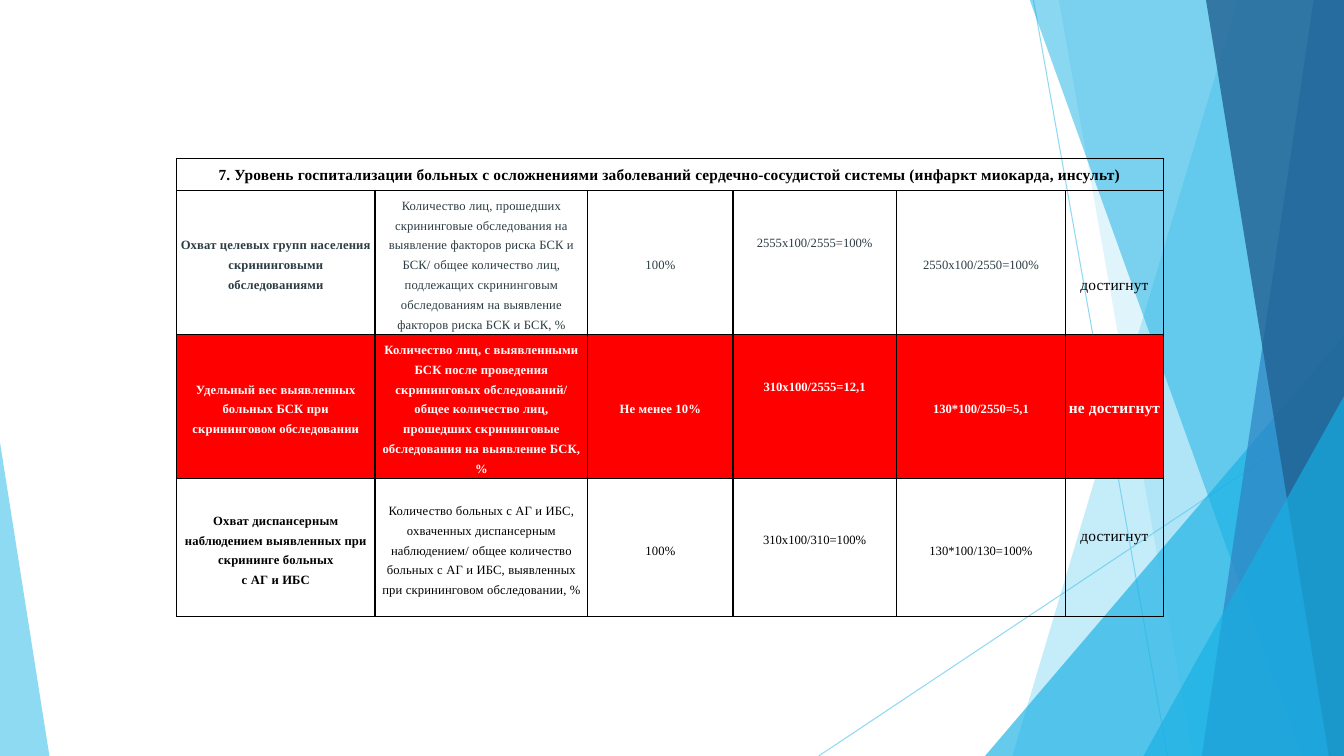
from lxml import etree
from pptx import Presentation
from pptx.dml.color import RGBColor
from pptx.enum.shapes import MSO_CONNECTOR, MSO_SHAPE
from pptx.enum.text import MSO_ANCHOR, PP_ALIGN
from pptx.oxml.ns import qn
from pptx.util import Inches, Pt

LINE = MSO_CONNECTOR.STRAIGHT
TRIANGLE = MSO_SHAPE.ISOSCELES_TRIANGLE
MIDDLE = MSO_ANCHOR.MIDDLE
CENTER = PP_ALIGN.CENTER

SKY = RGBColor(0x5F, 0xCB, 0xEF)
CYAN = RGBColor(0x17, 0xB0, 0xE4)
BLUE = RGBColor(0x2E, 0x83, 0xC3)
NAVY = RGBColor(0x22, 0x62, 0x92)
SLATE = RGBColor(0x2C, 0x3C, 0x43)
BLACK = RGBColor(0, 0, 0)
WHITE = RGBColor(255, 255, 255)
RED = RGBColor(255, 0, 0)
FONT = "Times New Roman"
WIDE, HIGH = 13.33, 7.5

# Table content
HEAD = ("7. Уровень госпитализации больных с осложнениями заболеваний "
        "сердечно-сосудистой системы (инфаркт миокарда, инсульт)")
ROWS = [
    ["Охват целевых групп населения скрининговыми обследованиями",
     "Количество лиц, прошедших скрининговые обследования на выявление "
     "факторов риска БСК и БСК/ общее количество лиц, подлежащих скрининговым "
     "обследованиям на выявление факторов риска БСК и БСК, %",
     "100%", "2555х100/2555=100%", "2550х100/2550=100%", "достигнут"],
    ["Удельный вес выявленных больных БСК при скрининговом обследовании",
     "Количество лиц, с выявленными БСК после проведения скрининговых "
     "обследований/ общее количество лиц, прошедших скрининговые "
     "обследования на выявление БСК, %",
     "Не менее 10%", "310х100/2555=12,1", "130*100/2550=5,1", "не достигнут"],
    ["Охват диспансерным наблюдением выявленных при скрининге больных\nс АГ и ИБС",
     "Количество больных с АГ и ИБС, охваченных диспансерным наблюдением/ "
     "общее количество больных с АГ и ИБС, выявленных при скрининговом "
     "обследовании, %",
     "100%", "310х100/310=100%", "130*100/130=100%", "достигнут"],
]
COLS = [1.97, 2.11, 1.44, 1.62, 1.68, 0.97]
TALL = [0.32, 1.43, 1.43, 1.37]
INKS = [SLATE, WHITE, BLACK]
# Top and bottom insets of cells whose text sits off the middle
SHIFT = {(1, 3): (0, 0.44), (1, 5): (0.42, 0), (2, 3): (0, 0.44),
         (3, 3): (0, 0.2), (3, 5): (0, 0.25)}

# Background facets: top left x, bottom left x, colour, opacity
BANDS_LOW = [(12.28, 10.04, SKY, 36), (10.5, 11.83, SKY, 20)]
BANDS_TOP = [(10.21, 12.91, CYAN, 50), (13.03, 11.92, BLUE, 70),
             (11.96, 13.18, NAVY, 80)]
# Left, top, width, apex, colour, opacity
PEAK_LOW = (9.77, 3.33, 3.56, 1, CYAN, 66)
PEAKS_TOP = [(11.34, 3.93, 1.99, 1, CYAN, 66), (0, 4.39, 0.49, 0, SKY, 70)]
RAYS = [(10.25, 0, 11.58, HIGH), (WIDE, 4.03, 8.12, HIGH)]

deck = Presentation()
deck.slide_width, deck.slide_height = Inches(WIDE), Inches(HIGH)
slide = deck.slides.add_slide(deck.slide_layouts[6])
shapes = slide.shapes


def fade(fill, alpha):
    color = fill.find(".//" + qn("a:srgbClr"))
    etree.SubElement(color, qn("a:alpha")).set("val", str(alpha * 1000))


def paint(shape, color, alpha):
    shape.shadow.inherit = False
    shape.fill.solid()
    shape.fill.fore_color.rgb = color
    shape.line.fill.background()
    fade(shape._element.spPr.find(qn("a:solidFill")), alpha)


def band(top, low, color, alpha):
    build = shapes.build_freeform(Inches(top), Inches(-0.01))
    build.add_line_segments([(Inches(x), Inches(y)) for x, y in
                             ((WIDE, -0.01), (WIDE, HIGH), (low, HIGH))])
    paint(build.convert_to_shape(), color, alpha)


def peak(left, top, width, apex, color, alpha):
    shape = shapes.add_shape(TRIANGLE, Inches(left), Inches(top),
                             Inches(width), Inches(HIGH - top))
    shape.adjustments[0] = apex
    paint(shape, color, alpha)


# Background
for ends in RAYS:
    ray = shapes.add_connector(LINE, *map(Inches, ends))
    ray.line.color.rgb = SKY
    ray.line.width = Pt(0.75)
    props = ray._element.spPr
    fade(props.find(qn("a:ln")), 70)
    etree.SubElement(props, qn("a:effectLst"))
for item in BANDS_LOW:
    band(*item)
peak(*PEAK_LOW)
for item in BANDS_TOP:
    band(*item)
for item in PEAKS_TOP:
    peak(*item)


def edge(cell):
    props = cell._tc.get_or_add_tcPr()
    for side in ("lnL", "lnR", "lnT", "lnB"):
        line = etree.SubElement(props, qn("a:" + side), w=str(Pt(1)))
        fill = etree.SubElement(line, qn("a:solidFill"))
        etree.SubElement(fill, qn("a:srgbClr"), val=str(BLACK))


def write(cell, text, size, color, bold, track):
    cell.text = text
    cell.vertical_anchor = MIDDLE
    for para in cell.text_frame.paragraphs:
        para.alignment = CENTER
        para.line_spacing = Pt(14.2)
        font = para.font
        font.name, font.size, font.bold = FONT, Pt(size), bold
        font.color.rgb = color
        para._p.pPr.find(qn("a:defRPr")).set("spc", str(track))


# Table
table = shapes.add_table(len(TALL), len(COLS), Inches(1.75), Inches(1.57),
                         Inches(sum(COLS)), Inches(sum(TALL))).table
table.first_row = table.horz_banding = False
for col, width in zip(table.columns, COLS):
    col.width = Inches(width)
for row, height in zip(table.rows, TALL):
    row.height = Inches(height)
for r in range(len(TALL)):
    for c in range(len(COLS)):
        cell = table.cell(r, c)
        edge(cell)
        side, rim = (0.04, 0.02) if c < 3 else (0, 0)
        top, low = SHIFT.get((r, c), (rim, rim))
        cell.margin_left = cell.margin_right = Inches(side)
        cell.margin_top, cell.margin_bottom = Inches(top), Inches(low)
        if r == 2:
            cell.fill.solid()
            cell.fill.fore_color.rgb = RED
        else:
            cell.fill.background()
        if r:
            last = c == 5
            ink = BLACK if last and r == 1 else INKS[r - 1]
            write(cell, ROWS[r - 1][c], 11 if last else 9, ink,
                  r == 2 or c == 0, 10 if c < 3 or last else 0)
table.cell(0, 0).merge(table.cell(0, len(COLS) - 1))
write(table.cell(0, 0), HEAD, 11, BLACK, True, 10)

deck.save("out.pptx")
